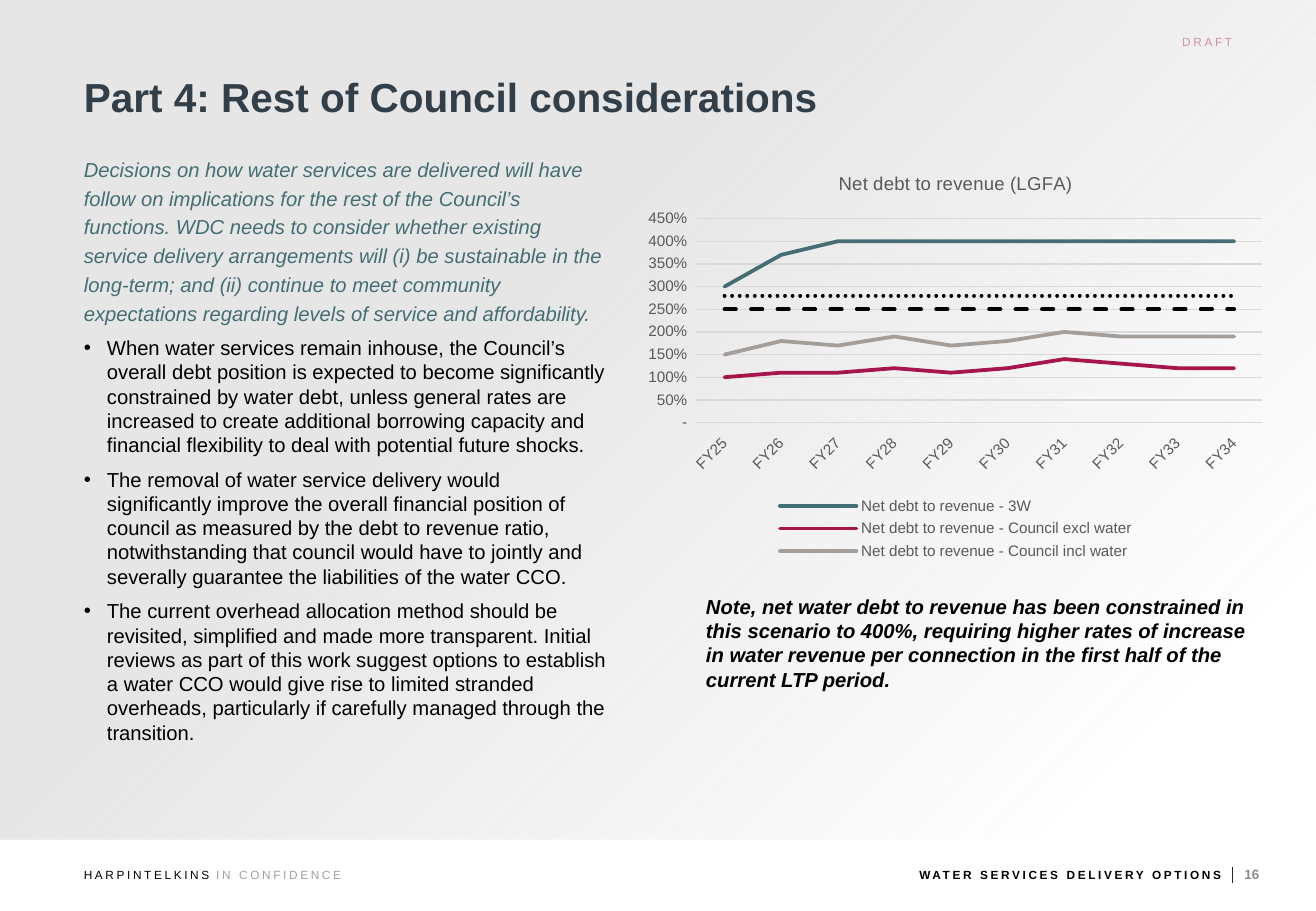
import collections

import pptx
import pptx.chart.data
import pptx.dml.color
import pptx.enum.chart
import pptx.enum.dml
import pptx.enum.shapes
import pptx.enum.text
import pptx.oxml
import pptx.oxml.ns
import pptx.util

Inches = pptx.util.Inches
Pt = pptx.util.Pt
RGBColor = pptx.dml.color.RGBColor
ALIGN = pptx.enum.text.PP_ALIGN
ANCHOR = pptx.enum.text.MSO_ANCHOR
DASH = pptx.enum.dml.MSO_LINE
Box = collections.namedtuple("Box", "left top width height")

FONT = "Arial"
BLACK = RGBColor(0, 0, 0)
NAVY = RGBColor(0x33, 0x3F, 0x48)
TEAL = RGBColor(0x43, 0x6E, 0x73)
CRIMSON = RGBColor(0xA6, 0x15, 0x4B)
STONE = RGBColor(0xA4, 0x9E, 0x9B)
GREY = RGBColor(0x8C, 0x8C, 0x8C)
CHARCOAL = RGBColor(0x26, 0x26, 0x26)
CHART_TEXT = RGBColor(0x59, 0x59, 0x59)
GRID = RGBColor(0xD9, 0xD9, 0xD9)

INTRO = (
    "Decisions on how water services are delivered will have follow on implications for the rest "
    "of the Council’s functions. WDC needs to consider whether existing service delivery "
    "arrangements will (i) be sustainable in the long-term; and (ii) continue to meet community "
    "expectations regarding levels of service and affordability."
)
CONSIDERATIONS = [
    "When water services remain inhouse, the Council’s overall debt position is expected to become "
    "significantly constrained by water debt, unless general rates are increased to create "
    "additional borrowing capacity and financial flexibility to deal with potential future shocks.",
    "The removal of water service delivery would significantly improve the overall financial "
    "position of council as measured by the debt to revenue ratio, notwithstanding that council "
    "would have to jointly and severally guarantee the liabilities of the water CCO.",
    "The current overhead allocation method should be revisited, simplified and made more "
    "transparent. Initial reviews as part of this work suggest options to establish a water CCO "
    "would give rise to limited stranded overheads, particularly if carefully managed through the "
    "transition.",
]
NOTE = (
    "Note, net water debt to revenue has been constrained in this scenario to 400%, requiring "
    "higher rates of increase in water revenue per connection in the first half of the current "
    "LTP period."
)
YEARS = [f"FY{year}" for year in range(25, 35)]
RATIOS = [
    ("Net debt to revenue - 3W", [3, 3.7] + [4] * 8, TEAL, DASH.SOLID),
    ("Net debt to revenue - Council excl water",
     [1, 1.1, 1.1, 1.2, 1.1, 1.2, 1.4, 1.3, 1.2, 1.2], CRIMSON, DASH.SOLID),
    ("Net debt to revenue - Council incl water",
     [1.5, 1.8, 1.7, 1.9, 1.7, 1.8, 2, 1.9, 1.9, 1.9], STONE, DASH.SOLID),
    ("Series 4", [2.8] * 10, BLACK, DASH.ROUND_DOT),
    ("Series 5", [2.5] * 10, BLACK, DASH.DASH),
]
HIDDEN_LEGEND_ENTRIES = (3, 4)
PLOT = Box(0.5, 0.54, 4.66, 1.68)


def xml(tag, attributes="", content=""):
    namespaces = pptx.oxml.ns.nsdecls("a", "c")
    return pptx.oxml.parse_xml(f"<{tag} {namespaces} {attributes}>{content}</{tag}>")


def set_font(font, size, color, bold=False, italic=False):
    font.name = FONT
    font.size = Pt(size)
    font.bold = bold
    font.italic = italic
    font.color.rgb = color


def set_frame(frame, anchor):
    frame.margin_left = frame.margin_top = frame.margin_right = frame.margin_bottom = 0
    frame.word_wrap = True
    frame.auto_size = pptx.enum.text.MSO_AUTO_SIZE.NONE
    frame.vertical_anchor = anchor


def add_text_frame(slide, box, anchor=ANCHOR.TOP):
    frame = slide.shapes.add_textbox(*map(Inches, box)).text_frame
    set_frame(frame, anchor)
    return frame


def add_label(slide, box, text, color, align=ALIGN.LEFT, bold=False):
    label = add_text_frame(slide, box, ANCHOR.MIDDLE).paragraphs[0]
    label.text = text
    label.alignment = align
    label.line_spacing = Pt(8.5)
    set_font(label.font, 7, color, bold)
    label.runs[0]._r.get_or_add_rPr().set("spc", "160")


def add_footer(slide, box):
    left, top, width, height = box
    right = left + width
    add_label(slide, Box(left, top, 1.07, height), "HARPINTELKINS", BLACK)
    add_label(slide, Box(left + 1.09, top, 2, height), "IN CONFIDENCE", STONE)
    add_label(slide, Box(right - 6.36, top, 5.91, height), "WATER SERVICES DELIVERY OPTIONS",
              BLACK, ALIGN.RIGHT, True)
    divider = slide.shapes.add_connector(
        pptx.enum.shapes.MSO_CONNECTOR.STRAIGHT,
        *map(Inches, (right - 0.36, top + 0.02, right - 0.36, top + 0.15)))
    divider.line.color.rgb = CHARCOAL
    divider.line.width = Pt(0.5)
    divider._element.spPr.append(xml("a:effectLst"))
    page = add_text_frame(slide, Box(right - 0.26, top, 0.26, height), ANCHOR.MIDDLE).paragraphs[0]
    page.text = "16"
    set_font(page.font, 8, GREY, bold=True)


def add_backdrop(slide, box):
    backdrop = slide.shapes.add_shape(pptx.enum.shapes.MSO_SHAPE.RECTANGLE, *map(Inches, box))
    backdrop.shadow.inherit = False
    backdrop.line.fill.background()
    backdrop.fill.gradient()
    default = backdrop._element.spPr.find(pptx.oxml.ns.qn("a:gradFill"))
    stops = "".join(
        f'<a:gs pos="{place}000"><a:srgbClr val="E7E6E6"><a:alpha val="{alpha}000"/></a:srgbClr></a:gs>'
        for place, alpha in ((0, 100), (37, 100), (88, 0)))
    default.getparent().replace(default, xml(
        "a:gradFill", 'rotWithShape="1"',
        f'<a:gsLst>{stops}</a:gsLst><a:path path="circle">'
        '<a:fillToRect r="100000" b="100000"/></a:path>'))


def place_title(slide, box):
    title = slide.shapes.title
    title.element.getparent().append(title.element)
    title.left, title.top, title.width, title.height = map(Inches, box)
    set_frame(title.text_frame, ANCHOR.MIDDLE)
    heading = title.text_frame.paragraphs[0]
    heading.text = "Part 4: Rest of Council considerations"
    heading.alignment = ALIGN.LEFT
    heading.line_spacing = 0.9
    set_font(heading.font, 24, NAVY, bold=True)


def add_considerations(slide, box):
    frame = add_text_frame(slide, box)
    intro = frame.paragraphs[0]
    intro.text = INTRO
    intro.line_spacing = Pt(17)
    intro.space_after = Pt(3)
    set_font(intro.font, 12, TEAL, italic=True)
    for text in CONSIDERATIONS:
        point = frame.add_paragraph()
        point.text = text
        point.space_before = point.space_after = Pt(3)
        properties = point._p.get_or_add_pPr()
        properties.set("marL", str(Inches(0.19)))
        properties.set("indent", str(Inches(-0.19)))
        properties.append(xml("a:buFont", 'typeface="Arial"'))
        properties.append(xml("a:buChar", 'char="•"'))
        set_font(point.font, 12, BLACK)


def add_debt_chart(slide, box):
    data = pptx.chart.data.CategoryChartData()
    data.categories = YEARS
    for name, ratios, _, _ in RATIOS:
        data.add_series(name, ratios)
    chart = slide.shapes.add_chart(
        pptx.enum.chart.XL_CHART_TYPE.LINE, *map(Inches, box), data).chart
    set_font(chart.font, 10, BLACK)
    chart.has_title = True
    heading = chart.chart_title.text_frame.paragraphs[0]
    heading.text = "Net debt to revenue (LGFA)"
    set_font(heading.font, 11, CHART_TEXT)

    for series, (_, _, color, dash) in zip(chart.plots[0].series, RATIOS):
        series.smooth = False
        series.marker.style = pptx.enum.chart.XL_MARKER_STYLE.NONE
        series.format.line.color.rgb = color
        series.format.line.width = Pt(2.25)
        series.format.line.dash_style = dash
        series._element.spPr.find(pptx.oxml.ns.qn("a:ln")).set("cap", "rnd")
    chart.plots[0].vary_by_categories = False

    years, percent = chart.category_axis, chart.value_axis
    for axis in (years, percent):
        axis.major_tick_mark = axis.minor_tick_mark = pptx.enum.chart.XL_TICK_MARK.NONE
        set_font(axis.tick_labels.font, 9, CHART_TEXT)
    years.tick_label_position = pptx.enum.chart.XL_TICK_LABEL_POSITION.LOW
    years._element.txPr.bodyPr.set("rot", "-2700000")
    percent.minimum_scale, percent.maximum_scale, percent.major_unit = 0, 4.5, 0.5
    percent.tick_labels.number_format = '0%_);\\(0%\\);"-"_);@_)'
    percent.tick_labels.number_format_is_linked = False
    percent.format.line.fill.background()
    for rule in (years.format.line, percent.major_gridlines.format.line):
        rule.color.rgb = GRID
        rule.width = Pt(0.75)

    chart.has_legend = True
    chart.legend.position = pptx.enum.chart.XL_LEGEND_POSITION.BOTTOM
    chart.legend.include_in_layout = False
    set_font(chart.legend.font, 9, CHART_TEXT)
    for place, index in enumerate(HIDDEN_LEGEND_ENTRIES, 1):
        chart.legend._element.insert(place, xml(
            "c:legendEntry", content=f'<c:idx val="{index}"/><c:delete val="1"/>'))

    plot_area = chart._chartSpace.chart.plotArea
    for layout in plot_area.findall(pptx.oxml.ns.qn("c:layout")):
        plot_area.remove(layout)
    modes = '<c:layoutTarget val="inner"/><c:xMode val="edge"/><c:yMode val="edge"/>'
    extent = "".join(
        f'<c:{side} val="{length / whole}"/>'
        for side, length, whole in zip("xywh", PLOT, (box.width, box.height) * 2))
    plot_area.insert(0, xml(
        "c:layout", content=f"<c:manualLayout>{modes}{extent}</c:manualLayout>"))


def add_note(slide, box):
    note = add_text_frame(slide, box).paragraphs[0]
    note.text = NOTE
    note.space_after = Pt(3)
    set_font(note.font, 12, BLACK, bold=True, italic=True)


def main():
    deck = pptx.Presentation()
    deck.slide_width, deck.slide_height = Inches(10.83), Inches(7.5)
    slide = deck.slides.add_slide(deck.slide_layouts.get_by_name("Title Only"))
    add_label(slide, Box(9.08, 0.23, 1.06, 0.23), "DRAFT", CRIMSON, ALIGN.RIGHT)
    add_backdrop(slide, Box(0, 0, 10.83, 6.91))
    add_footer(slide, Box(0.69, 7.12, 9.81, 0.16))
    add_considerations(slide, Box(0.69, 1.26, 4.33, 5.53))
    place_title(slide, Box(0.69, 0.23, 9.45, 1.18))
    add_debt_chart(slide, Box(5.23, 1.26, 5.27, 3.39))
    add_note(slide, Box(5.81, 4.89, 4.55, 0.95))
    deck.save("out.pptx")


if __name__ == "__main__":
    main()
